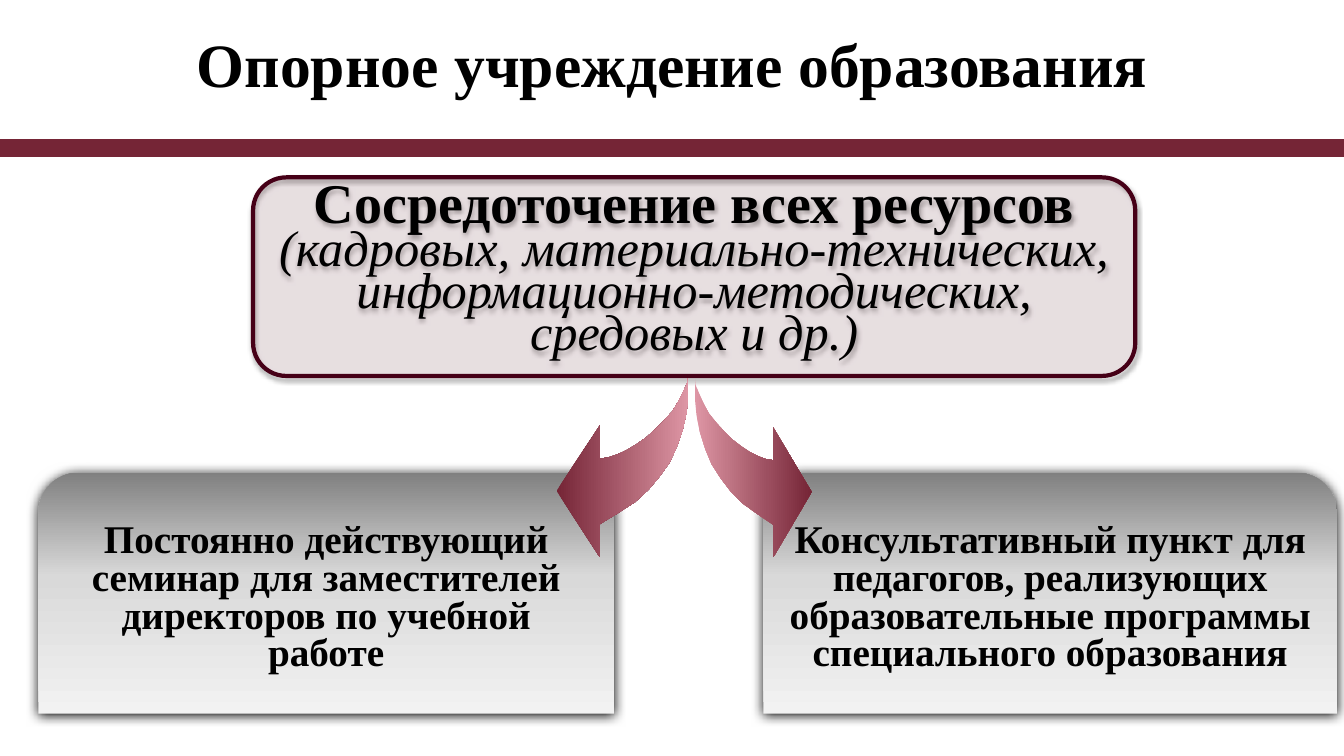
from dataclasses import dataclass

from pptx import Presentation
from pptx import util as u
from pptx.dml.color import RGBColor
from pptx.enum import shapes, text
from pptx.oxml import ns, parse_xml

PX = 9144
MAROON, BLACK = "752536", "000000"
SILVER = ((0, "F2F2F2"), (57, "D9D9D9"), (100, "808080"), (100, "A6A6A6"))
ROSE = ((0, MAROON), (100, "DE96A5"))
ROSE_MIRRORED = ((0, "DE96A5"), (100, MAROON))
ARROW_WIDTH, ARROW_HEIGHT = 131, 183
ARROW_OUTLINE = (
    (131, 0), (131, 20), (129, 39), (125, 57), (119, 74), (112, 89), (102, 103),
    (91, 116), (78, 128), (61, 139), (43, 150), (43, 183), (0, 117), (43, 52),
    (43, 85), (51, 84), (60, 81), (69, 77), (79, 71), (89, 64), (98, 56),
    (107, 47), (115, 38), (121, 28), (126, 18), (130, 9),
)


@dataclass(frozen=True)
class Service:
    left: int
    width: int
    caption: str


@dataclass(frozen=True)
class Arrow:
    left: int
    top: int
    width: int
    height: int
    mirrored: bool


SERVICES = (
    Service(38, 571, "Постоянно действующий семинар для заместителей "
                     "директоров по учебной работе"),
    Service(757, 569, "Консультативный пункт для педагогов, реализующих "
                      "образовательные программы специального образования"),
)
ARROWS = (Arrow(552, 370, 131, 183, False), Arrow(689, 373, 116, 180, True))


def px(length: int) -> u.Emu:
    """Turn px into EMU."""
    return u.Emu(length * PX)


def color(value: str) -> RGBColor:
    """Read a hex colour."""
    return RGBColor.from_string(value)


def write(shape, content: str, *, size: int, spacing: int,
          bold: bool = False, italic: bool = False, append: bool = False) -> None:
    """Write one centred paragraph into a shape."""
    frame = shape.text_frame
    frame.word_wrap = True
    frame.vertical_anchor = text.MSO_ANCHOR.MIDDLE
    paragraph = frame.add_paragraph() if append else frame.paragraphs[0]
    paragraph.alignment = text.PP_ALIGN.CENTER
    paragraph.line_spacing = u.Pt(spacing)
    run = paragraph.add_run()
    run.text = content
    font = run.font
    font.name, font.size, font.bold, font.italic = "Times New Roman", u.Pt(size), bold, italic
    font.color.rgb = color(BLACK)


def shade(shape, stops: tuple[tuple[int, str], ...], angle: int) -> None:
    """Fill a shape with a linear gradient and no outline."""
    shape.fill.gradient()
    shape.fill.gradient_angle = angle
    shape.line.fill.background()
    shape.shadow.inherit = False
    stop_list = shape._element.spPr.find(".//" + ns.qn("a:gsLst"))
    for stop in list(stop_list):
        stop_list.remove(stop)
    for position, value in stops:
        stop_list.append(parse_xml(
            f'<a:gs {ns.nsdecls("a")} pos="{position * 1000}">'
            f'<a:srgbClr val="{value}"/></a:gs>'))


def cast_shadow(shape, opacity: int, blur: float, distance: float) -> None:
    """Add a downward shadow."""
    shape.shadow.inherit = False
    shape._element.spPr.find(ns.qn("a:effectLst")).append(parse_xml(
        f'<a:outerShdw {ns.nsdecls("a")} blurRad="{u.Pt(blur)}" dist="{u.Pt(distance)}" '
        f'dir="5400000" algn="t" rotWithShape="0"><a:srgbClr val="{BLACK}">'
        f'<a:alpha val="{opacity * 1000}"/></a:srgbClr></a:outerShdw>'))


def draw_heading(slide) -> None:
    """Draw the heading and the rule below it."""
    heading = slide.shapes.add_textbox(px(92), px(17), px(1150), px(109))
    write(heading, "Опорное учреждение образования", size=44, spacing=40, bold=True)
    rule = slide.shapes.add_connector(
        shapes.MSO_CONNECTOR.STRAIGHT, px(0), px(147), px(1333), px(147))
    rule.line.color.rgb = color(MAROON)
    rule.line.width = u.Pt(12.75)
    rule._element.spPr.append(parse_xml(f'<a:effectLst {ns.nsdecls("a")}/>'))


def draw_service(slide, service: Service) -> None:
    """Draw one service panel."""
    panel = slide.shapes.add_shape(
        shapes.MSO_SHAPE.ROUND_2_SAME_RECTANGLE,
        px(service.left), px(469), px(service.width), px(239))
    shade(panel, SILVER, 90)
    cast_shadow(panel, 100, 8.5, 1)
    write(panel, service.caption, size=28, spacing=27, bold=True)


def draw_resources(slide) -> None:
    """Draw the translucent panel of pooled resources."""
    resources = slide.shapes.add_shape(
        shapes.MSO_SHAPE.ROUNDED_RECTANGLE, px(251), px(176), px(875), px(197))
    resources.fill.solid()
    resources.fill.fore_color.rgb = color(MAROON)
    tint = resources._element.spPr.find(f'{ns.qn("a:solidFill")}/{ns.qn("a:srgbClr")}')
    tint.append(parse_xml(f'<a:alpha {ns.nsdecls("a")} val="11000"/>'))
    resources.line.color.rgb = color("460017")
    resources.line.width = u.Pt(3)
    cast_shadow(resources, 32, 3.5, 2.2)
    write(resources, "Сосредоточение всех ресурсов", size=40, spacing=30, bold=True)
    write(resources, "(кадровых, материально-технических, информационно-методических, "
          "средовых и др.)", size=36, spacing=30, italic=True, append=True)


def draw_arrow(slide, arrow: Arrow) -> None:
    """Draw one curved arrow, mirrored if it points right."""
    points = [(ARROW_WIDTH - x if arrow.mirrored else x, y) for x, y in ARROW_OUTLINE]
    scale = (PX * arrow.width / ARROW_WIDTH, PX * arrow.height / ARROW_HEIGHT)
    builder = slide.shapes.build_freeform(*points[0], scale=scale)
    builder.add_line_segments(points[1:], close=True)
    curve = builder.convert_to_shape(px(arrow.left), px(arrow.top))
    shade(curve, ROSE_MIRRORED if arrow.mirrored else ROSE, 0)


def main() -> None:
    """Build the slide and save it."""
    deck = Presentation()
    deck.slide_width, deck.slide_height = px(1333), px(750)
    slide = deck.slides.add_slide(deck.slide_layouts[6])
    draw_heading(slide)
    for service in SERVICES:
        draw_service(slide, service)
    draw_resources(slide)
    for arrow in ARROWS:
        draw_arrow(slide, arrow)
    deck.save("out.pptx")


if __name__ == "__main__":
    main()
